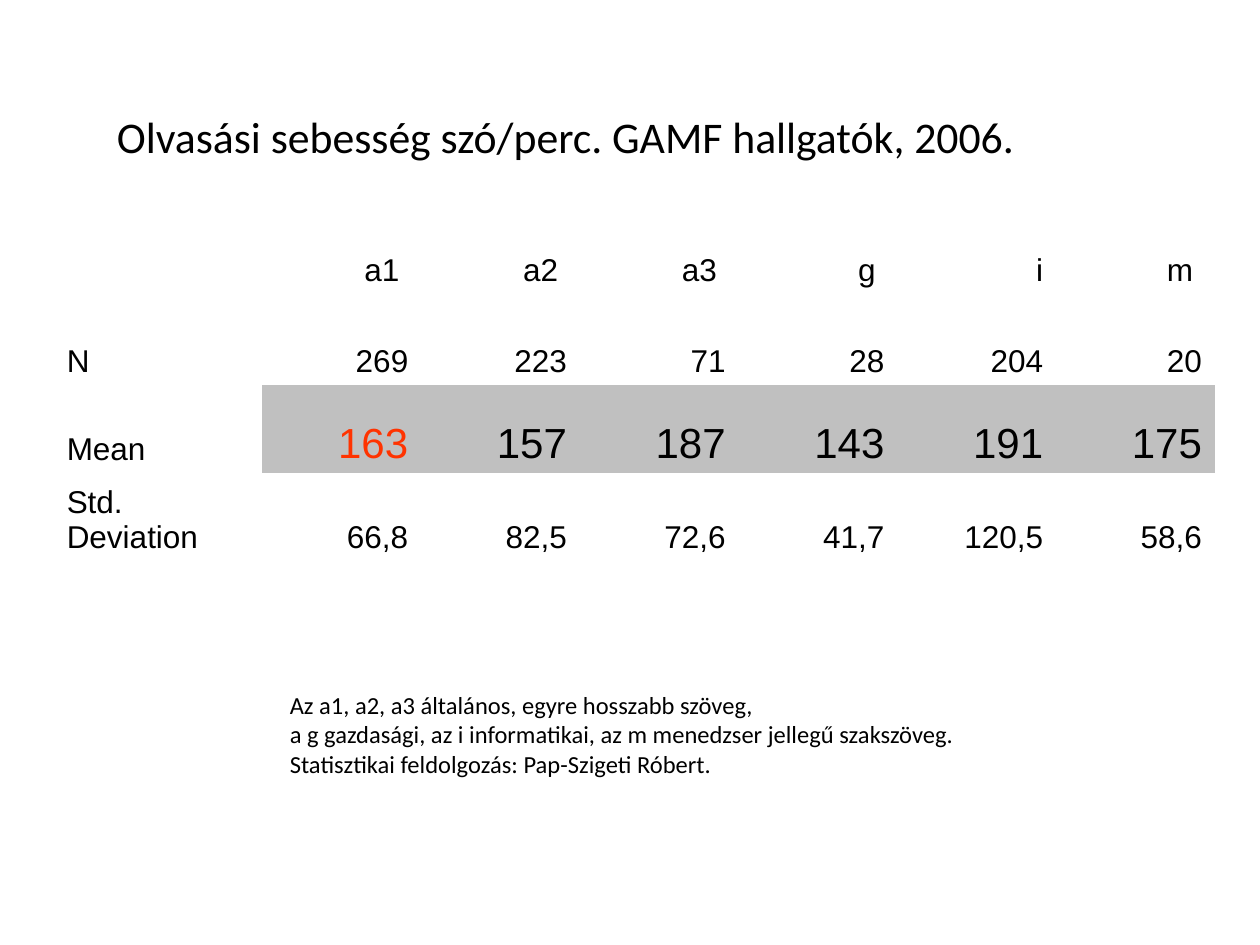
from pptx import Presentation
from pptx.dml.color import RGBColor
from pptx.enum.text import MSO_ANCHOR, PP_ALIGN
from pptx.util import Inches, Pt

LEFT, RIGHT = PP_ALIGN.LEFT, PP_ALIGN.RIGHT
TOP, BOTTOM = MSO_ANCHOR.TOP, MSO_ANCHOR.BOTTOM

WIDTH, HEIGHT = 10, 7.5
COLORS = {"text": "000000", "accent": "FF3300", "band": "C0C0C0"}
PLAIN_TABLE_STYLE = "{2D5ABB26-0587-4C30-8999-92F81FD0307C}"

TITLE = "Olvasási sebesség szó/perc. GAMF hallgatók, 2006."
NOTES = [
    "Az a1, a2, a3 általános, egyre hosszabb szöveg,",
    "a g gazdasági, az i informatikai, az m menedzser jellegű szakszöveg.",
    "Statisztikai feldolgozás: Pap-Szigeti Róbert.",
]
STATISTICS = [
    ["", "a1 ", "a2 ", "a3 ", "g ", "i", "m "],
    ["N", "269", "223", "71", "28", "204", "20"],
    ["Mean", "163", "157", "187", "143", "191", "175"],
    ["Std. Deviation", "66,8", "82,5", "72,6", "41,7", "120,5", "58,6"],
]
COLUMN_WIDTHS = [1.65] + [1.26] * 6
ROW_HEIGHTS = [1.24, 0.43, 0.7, 0.7]
HEADER_ROW, MEAN_ROW = 0, 2


class SlideBuilder:
    text_font = "Calibri"
    table_font = "Arial"

    def __init__(self, slide):
        self.slide = slide

    def style(self, paragraph, font_name, size, color="text", align=LEFT):
        paragraph.alignment = align
        paragraph.font.name = font_name
        paragraph.font.size = Pt(size)
        paragraph.font.color.rgb = RGBColor.from_string(COLORS[color])

    def text(self, lines, x, y, width, height, size, anchor=TOP, indent=0.1):
        """Place lines in a box given as shares of the slide's size."""
        box = self.slide.shapes.add_textbox(
            Inches(x * WIDTH), Inches(y * HEIGHT),
            Inches(width * WIDTH), Inches(height * HEIGHT))
        frame = box.text_frame
        frame.word_wrap = True
        frame.vertical_anchor = anchor
        frame.margin_left = Inches(indent)
        frame.text = "\n".join(lines)
        for paragraph in frame.paragraphs:
            self.style(paragraph, self.text_font, size)

    def cell(self, cell, content, row, column):
        is_mean = row == MEAN_ROW and column > 0
        cell.vertical_anchor = BOTTOM
        if row == HEADER_ROW:
            cell.margin_bottom = Inches(0.34)
        if is_mean:
            cell.fill.solid()
            cell.fill.fore_color.rgb = RGBColor.from_string(COLORS["band"])
        else:
            cell.fill.background()
        cell.text = content
        self.style(
            cell.text_frame.paragraphs[0], self.table_font,
            size=24 if is_mean else 18,
            color="accent" if is_mean and column == 1 else "text",
            align=RIGHT if column else LEFT)

    def table(self, rows, x, y):
        frame = self.slide.shapes.add_table(
            len(rows), len(rows[0]), Inches(x * WIDTH), Inches(y * HEIGHT),
            Inches(sum(COLUMN_WIDTHS)), Inches(sum(ROW_HEIGHTS)))
        table = frame.table
        table.first_row = table.horz_banding = False
        properties = frame.element.graphic.graphicData.tbl.tblPr
        properties[0].text = PLAIN_TABLE_STYLE
        for column, width in zip(table.columns, COLUMN_WIDTHS):
            column.width = Inches(width)
        for row, height in zip(table.rows, ROW_HEIGHTS):
            row.height = Inches(height)
        for row, values in enumerate(rows):
            for column, content in enumerate(values):
                self.cell(table.cell(row, column), content, row, column)


def main():
    presentation = Presentation()
    presentation.slide_width = Inches(WIDTH)
    presentation.slide_height = Inches(HEIGHT)
    builder = SlideBuilder(
        presentation.slides.add_slide(presentation.slide_layouts[6]))
    builder.table(STATISTICS, x=0.043, y=0.185)
    builder.text(NOTES, x=0.216, y=0.7, width=0.685, height=0.13, size=14,
                 anchor=BOTTOM, indent=0.14)
    builder.text([TITLE], x=0.083, y=0.11, width=0.85, height=0.07, size=25)
    presentation.save("out.pptx")


if __name__ == "__main__":
    main()
